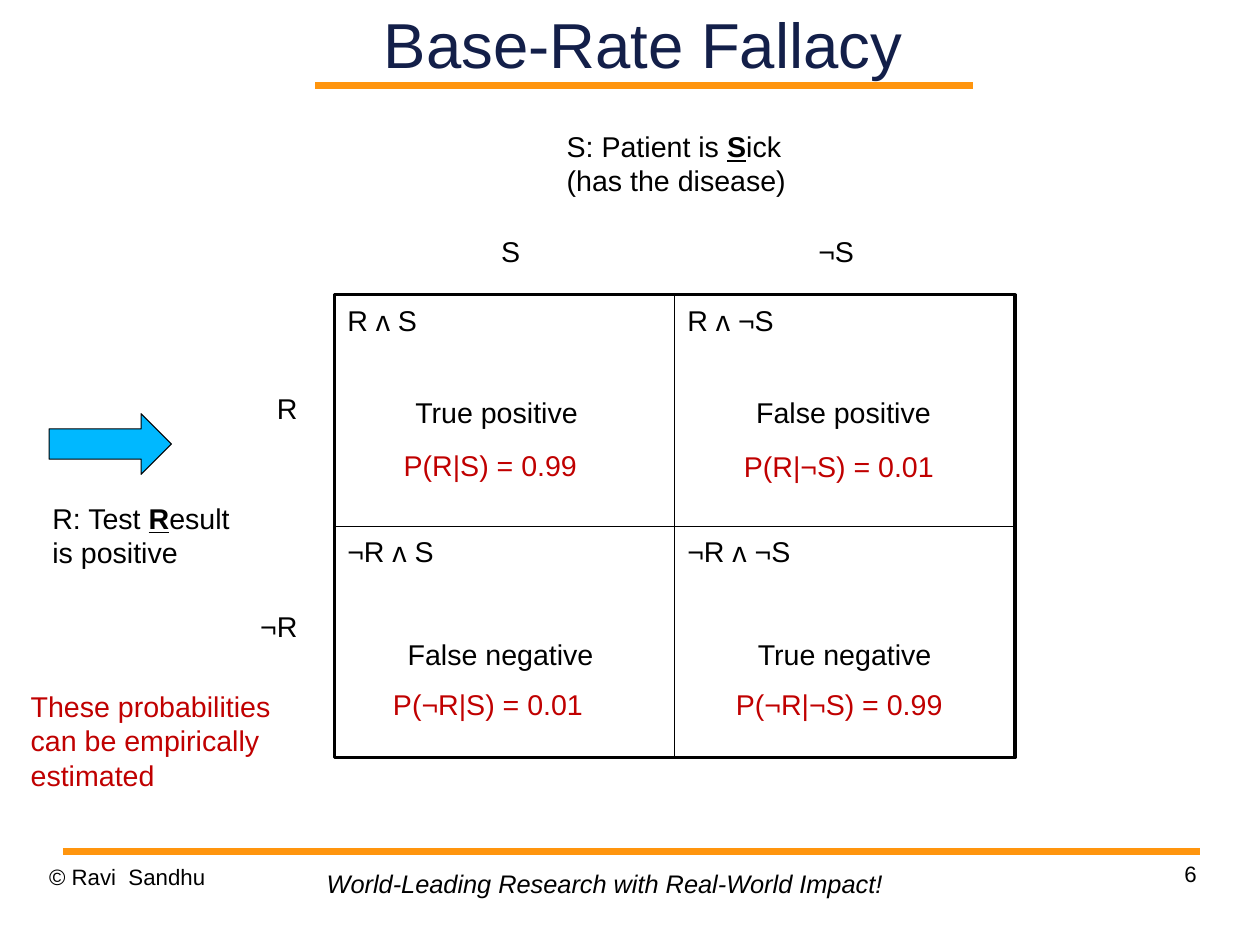
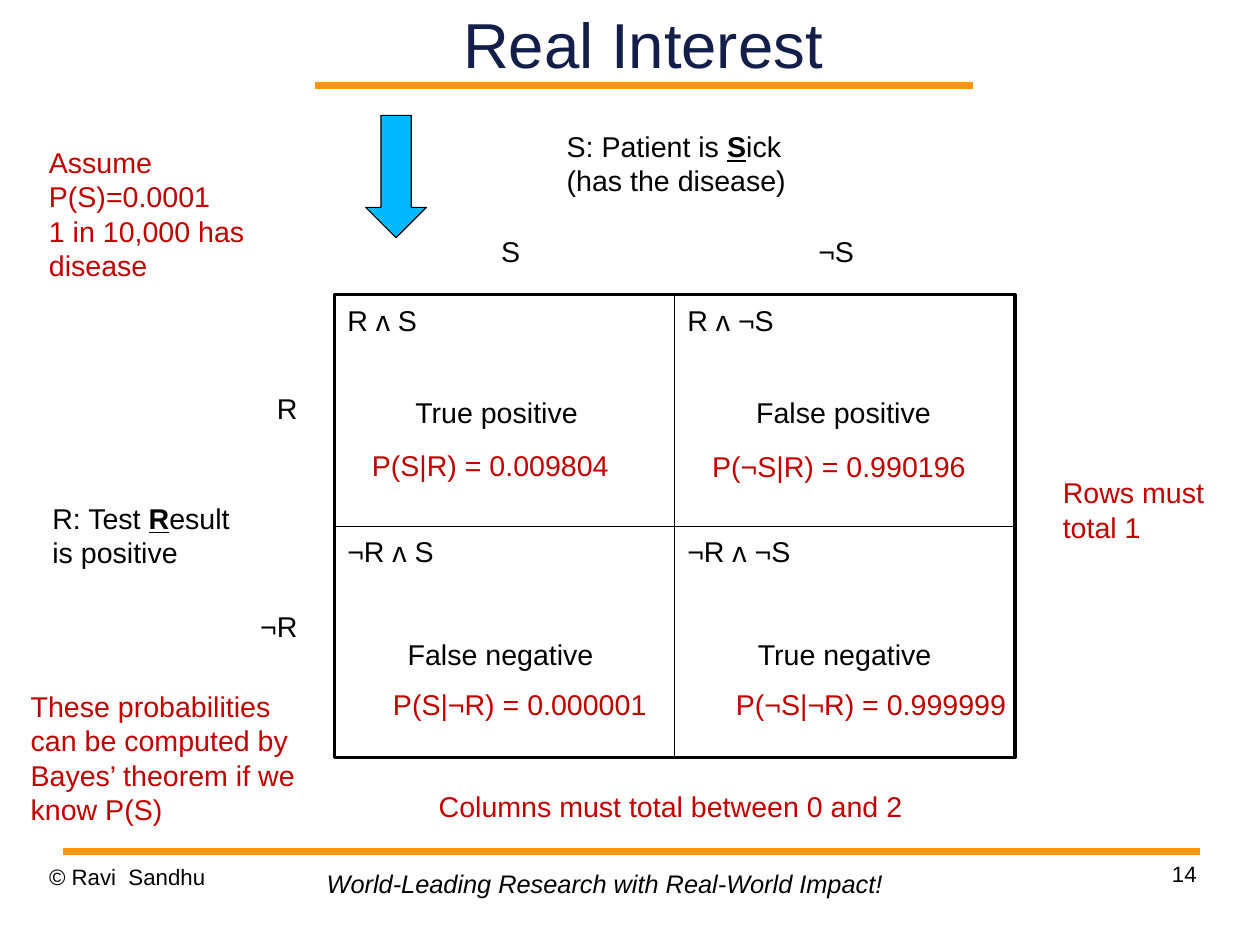
from lxml import etree
from pptx import Presentation
from pptx.dml.color import RGBColor
from pptx.enum.shapes import MSO_CONNECTOR as Connector, MSO_SHAPE as Preset
from pptx.enum.text import MSO_ANCHOR as Anchor, PP_ALIGN as Align
from pptx.oxml.ns import qn
from pptx.util import Cm, Inches, Pt

FONT = "Arial"
BLACK, RED, NAVY, ORANGE, BLUE = "000000", "C00000", "131F49", "FF950E", "00B8FF"

GRID_LEFT, GRID_TOP, GRID_WIDTH, GRID_HEIGHT = 2.93, 2.58, 5.95, 4.05
GRID_RIGHT, GRID_BOTTOM = GRID_LEFT + GRID_WIDTH, GRID_TOP + GRID_HEIGHT
MIDDLE_X, MIDDLE_Y = GRID_LEFT + GRID_WIDTH / 2, GRID_TOP + GRID_HEIGHT / 2

EVENTS = [["R ᴧ S", "R ᴧ ¬S"], ["¬R ᴧ S", "¬R ᴧ ¬S"]]
OUTCOMES = [
    ("True positive", 3.53, 3.41, 1.63),
    ("False positive", 6.5, 3.41, 1.76),
    ("False negative", 3.45, 5.52, 1.86),
    ("True negative", 6.46, 5.52, 1.86),
]
PROBABILITY_PLACES = [
    (3.04, 3.87, 2.5, Align.CENTER),
    (6.09, 3.88, 2.5, Align.CENTER),
    (3.34, 5.96, 2.6, Align.LEFT),
    (6.34, 5.96, 2.6, Align.LEFT),
]


def color(hex_code):
    return RGBColor.from_string(hex_code)


def style(paragraph, size, hex_code, align, italic=False):
    paragraph.alignment = align
    font = paragraph.font
    font.name, font.size, font.italic = FONT, Pt(size), italic
    font.color.rgb = color(hex_code)


def add_text(slide, lines, left, top, width, height=0.4, size=18,
             hex_code=BLACK, align=Align.LEFT, italic=False, inset=True):
    frame = slide.shapes.add_textbox(
        Inches(left), Inches(top), Inches(width), Inches(height)).text_frame
    frame.word_wrap = True
    if not inset:
        frame.margin_left = frame.margin_right = 0
        frame.margin_top = frame.margin_bottom = 0
    for index, line in enumerate(lines):
        paragraph = frame.add_paragraph() if index else frame.paragraphs[0]
        style(paragraph, size, hex_code, align, italic)
        paragraph.add_run().text = line
    return frame


def add_definition(slide, before, initial, after, second_line, left, top, width):
    frame = add_text(slide, [before, second_line], left, top, width, 0.71)
    first = frame.paragraphs[0]
    letter = first.add_run()
    letter.text = initial
    letter.font.bold = letter.font.underline = True
    first.add_run().text = after


def add_line(slide, start, end, hex_code, weight):
    line = slide.shapes.add_connector(
        Connector.STRAIGHT, *(Inches(value) for value in start + end))
    line.line.color.rgb = color(hex_code)
    line.line.width = Pt(weight)
    etree.SubElement(line._element.spPr, qn("a:effectLst"))


def add_outlined(slide, preset, left, top, width, height, weight, fill=None):
    shape = slide.shapes.add_shape(
        preset, Inches(left), Inches(top), Inches(width), Inches(height))
    shape.shadow.inherit = False
    if fill:
        shape.fill.solid()
        shape.fill.fore_color.rgb = color(fill)
    else:
        shape.fill.background()
    shape.line.color.rgb = color(BLACK)
    shape.line.width = Pt(weight)
    return shape


def add_arrow(slide, left, top, rotation=0):
    arrow = add_outlined(slide, Preset.RIGHT_ARROW, left, top, 1.07, 0.53, 0.75, BLUE)
    arrow.rotation = rotation


def add_red_note(slide, lines, left, top, width, height):
    add_text(slide, lines, left, top, width, height, hex_code=RED)


def add_title(slide, text):
    title = slide.shapes.title
    title.left, title.top = Inches(2.41), Inches(0)
    title.width, title.height = Inches(6.43), Inches(0.75)
    frame = title.text_frame
    frame.text = text
    frame.margin_left = frame.margin_right = 0
    frame.margin_top = frame.margin_bottom = 0
    frame.vertical_anchor = Anchor.MIDDLE
    style(frame.paragraphs[0], 40, NAVY, Align.CENTER)


def add_framed_slide(deck, title, number):
    slide = deck.slides.add_slide(deck.slide_layouts[5])
    add_title(slide, title)
    add_line(slide, (2.76, 0.75), (8.51, 0.75), ORANGE, 4.31)
    add_line(slide, (0.55, 7.45), (10.5, 7.45), ORANGE, 4.31)
    add_text(slide, ["© Ravi  Sandhu"], 0.43, 7.55, 2.57, 0.57, size=14, inset=False)
    add_text(slide, [number], 7.9, 7.53, 2.57, 0.57, size=14, align=Align.RIGHT, inset=False)
    add_text(slide, ["World-Leading Research with Real-World Impact!"],
             2.76, 7.55, 5.2, 0.37, size=16, italic=True)
    return slide


def add_matrix(slide, probabilities):
    add_outlined(slide, Preset.RECTANGLE, GRID_LEFT, GRID_TOP, GRID_WIDTH, GRID_HEIGHT, 2)
    add_line(slide, (MIDDLE_X, GRID_TOP), (MIDDLE_X, GRID_BOTTOM), BLACK, 0.75)
    add_line(slide, (GRID_LEFT, MIDDLE_Y), (GRID_RIGHT, MIDDLE_Y), BLACK, 0.75)

    add_definition(slide, "S: Patient is ", "S", "ick", "(has the disease)", 4.86, 1.08, 2.2)
    add_definition(slide, "R: Test ", "R", "esult", "is positive", 0.36, 4.33, 1.9)
    for heading, right, top in [("R", 2.7, 3.37), ("¬R", 2.7, 5.28),
                                ("S", 4.65, 2), ("¬S", 7.57, 2)]:
        add_text(slide, [heading], right - 0.55, top, 0.55, align=Align.RIGHT)

    for events, top in zip(EVENTS, (GRID_TOP, MIDDLE_Y)):
        for event, left in zip(events, (GRID_LEFT, MIDDLE_X)):
            add_text(slide, [event], left + 0.01, top + 0.02, 1.2)
    for outcome, left, top, width in OUTCOMES:
        add_text(slide, [outcome], left, top, width, align=Align.CENTER)
    for probability, (left, top, width, align) in zip(probabilities, PROBABILITY_PLACES):
        add_text(slide, [probability], left, top, width, hex_code=RED, align=align)


def main():
    deck = Presentation()
    deck.slide_width, deck.slide_height = Cm(28), Cm(21)

    fallacy = add_framed_slide(deck, "Base-Rate Fallacy", "6")
    add_matrix(fallacy, ["P(R|S) = 0.99", "P(R|¬S) = 0.01",
                         "P(¬R|S) = 0.01", "P(¬R|¬S) = 0.99"])
    add_arrow(fallacy, 0.43, 3.62)
    add_red_note(fallacy, ["These probabilities can be empirically estimated"],
                 0.17, 5.98, 2.33, 1.01)

    interest = add_framed_slide(deck, "Real Interest", "14")
    add_matrix(interest, ["P(S|R) = 0.009804", "P(¬S|R) = 0.990196",
                          "P(S|¬R) = 0.000001", "P(¬S|¬R) = 0.999999"])
    add_arrow(interest, 2.93, 1.28, 90)
    add_red_note(interest, ["These probabilities can be computed by "
                            "Bayes’ theorem if we know P(S)"], 0.17, 5.98, 2.74, 1.31)
    add_red_note(interest, ["Columns must total between 0 and 2"], 3.74, 6.85, 4.4, 0.4)
    add_red_note(interest, ["Rows must total 1"], 9.2, 4.11, 1.69, 0.71)
    add_red_note(interest, ["Assume P(S)=0.0001", "1 in 10,000 has disease"],
                 0.33, 1.22, 2.43, 1.31)

    deck.save("out.pptx")


if __name__ == "__main__":
    main()
